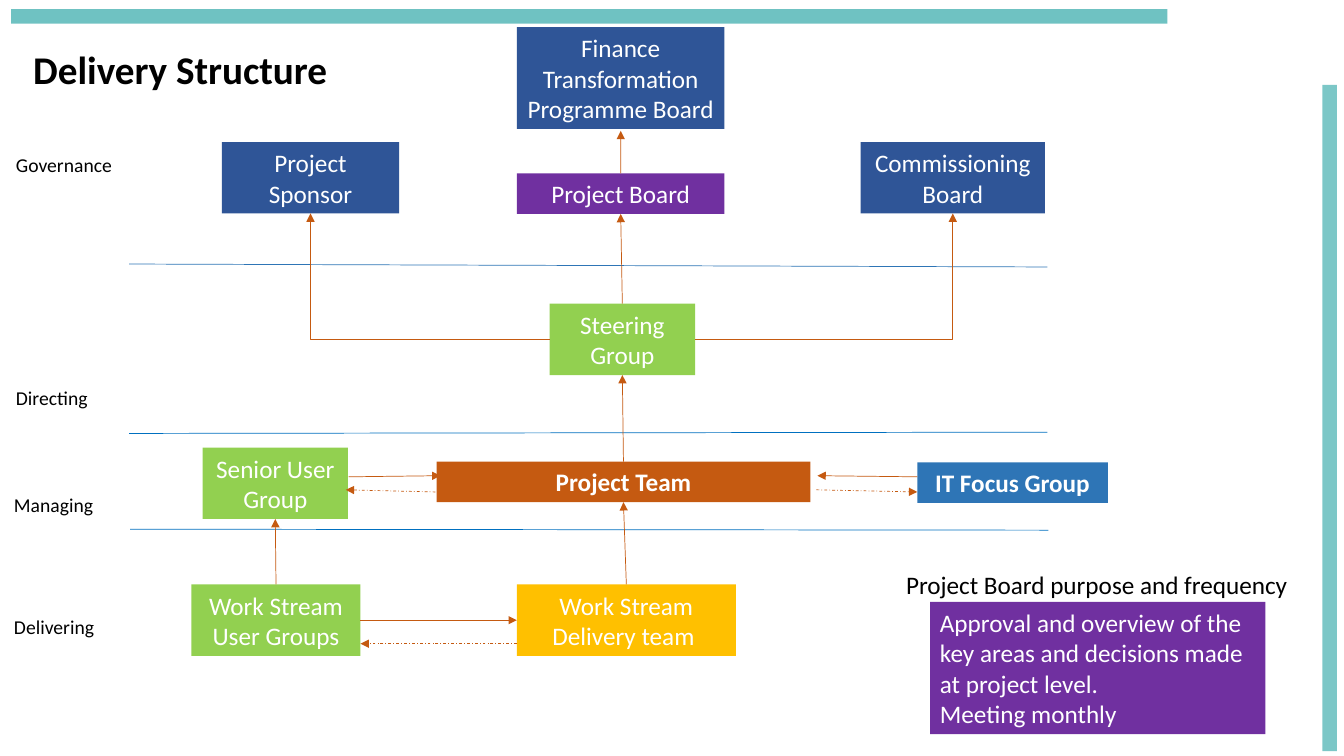
from lxml import etree
from pptx import Presentation
from pptx.dml.color import RGBColor
from pptx.enum.dml import MSO_LINE
from pptx.enum.shapes import MSO_CONNECTOR, MSO_SHAPE
from pptx.enum.text import MSO_AUTO_SIZE, PP_ALIGN
from pptx.oxml.ns import qn
from pptx.util import Pt

RECTANGLE = MSO_SHAPE.RECTANGLE
STRAIGHT, ELBOW = MSO_CONNECTOR.STRAIGHT, MSO_CONNECTOR.ELBOW
LEFT, CENTER = PP_ALIGN.LEFT, PP_ALIGN.CENTER
GROW = MSO_AUTO_SIZE.SHAPE_TO_FIT_TEXT
DASH_DOT = MSO_LINE.DASH_DOT
TOP_SIDE, LEFT_SIDE, BOTTOM_SIDE, RIGHT_SIDE = range(4)
COLORS = {
    "navy": "2F5597", "purple": "7030A0", "orange": "C55A11", "green": "92D050",
    "amber": "FFC000", "blue": "2E75B6", "divider": "0070C0", "teal": "089797",
    "white": "FFFFFF", "black": "000000",
}


def write(shape, text, size, color, bold=False, align=LEFT, wrap=True):
    frame = shape.text_frame
    frame.word_wrap = wrap
    frame.auto_size = GROW
    para = frame.paragraphs[0]
    para.text = text
    para.alignment = align
    para.font.name = "Calibri"
    para.font.size = Pt(size)
    para.font.bold = bold
    para.font.color.rgb = RGBColor.from_string(COLORS[color])


def connect(kind, begin, end, color, arrow=True):
    """Draw a thin line; each end is an (x, y) point or a (box name, side) pair."""
    ends = [(0, 0) if isinstance(spot[0], str) else spot for spot in (begin, end)]
    line = page.shapes.add_connector(kind, *[Pt(value) for spot in ends for value in spot])
    if isinstance(begin[0], str):
        line.begin_connect(boxes[begin[0]], begin[1])
    if isinstance(end[0], str):
        line.end_connect(boxes[end[0]], end[1])
    line.line.color.rgb = RGBColor.from_string(COLORS[color])
    line.line.width = Pt(0.5)
    properties = line._element.spPr
    if arrow:
        etree.SubElement(properties.find(qn("a:ln")), qn("a:tailEnd"), type="triangle")
    if kind == ELBOW:
        properties.find(qn("a:prstGeom")).set("prst", "bentConnector2")
    etree.SubElement(properties, qn("a:effectLst"))
    return line


deck = Presentation()
deck.slide_width, deck.slide_height = Pt(960), Pt(540)
page = deck.slides.add_slide(deck.slide_layouts[6])

# Teal bars: left, top, width, height, opacity in percent
for left, top, width, height, opacity in [
    (944.6, 60.6, 10.4, 476, 53),
    (7.9, 6.5, 826, 10.4, 58),
]:
    bar = page.shapes.add_shape(RECTANGLE, Pt(left), Pt(top), Pt(width), Pt(height))
    bar.shadow.inherit = False
    bar.fill.solid()
    bar.fill.fore_color.rgb = RGBColor.from_string(COLORS["teal"])
    bar.line.fill.background()
    shade = bar._element.spPr.find(qn("a:solidFill"))[0]
    etree.SubElement(shade, qn("a:alpha"), val=str(opacity * 1000))

# Dividers between the levels
for begin, end, color in [
    ((92.2, 188.6), (748.1, 190.7), "blue"),
    ((92.2, 309.6), (748.1, 308.7), "divider"),
    ((92.9, 378), (748.8, 378.7), "divider"),
]:
    connect(STRAIGHT, begin, end, color, arrow=False)

# Boxes: name, text, left, top, width, height, fill, bold, alignment
boxes = {}
for name, text, left, top, width, height, color, bold, align in [
    ("commissioning", "Commissioning Board", 614.8, 101.5, 131.6, 51, "navy", False, CENTER),
    ("programme", "Finance Transformation Programme Board", 369.2, 19.3, 148.3, 72.7, "navy", False, CENTER),
    ("board", "Project Board", 369.2, 123.8, 148.3, 29, "purple", False, CENTER),
    ("team", "Project Team", 311.8, 329.7, 267.1, 29, "orange", True, CENTER),
    ("users", "Work Stream User Groups", 136.8, 417.5, 120.7, 51, "green", False, CENTER),
    ("senior", "Senior User Group", 144.7, 319.7, 103.9, 51, "green", False, CENTER),
    ("steering", "Steering Group", 392.6, 216.9, 103.9, 51, "green", False, CENTER),
    ("sponsor", "Project Sponsor", 158.4, 101.5, 126.8, 51, "navy", False, CENTER),
    ("delivery", "Work Stream Delivery team ", 369.2, 417.5, 156.4, 51, "amber", False, CENTER),
    ("it", "IT Focus Group", 655.2, 330.2, 136.1, 29, "blue", True, CENTER),
    ("purpose", "Approval and overview of the key areas and decisions made at project level.\nMeeting monthly",
     664.3, 429.9, 239.5, 94.5, "purple", False, LEFT),
]:
    box = page.shapes.add_shape(RECTANGLE, Pt(left), Pt(top), Pt(width), Pt(height))
    box.shadow.inherit = False
    box.fill.solid()
    box.fill.fore_color.rgb = RGBColor.from_string(COLORS[color])
    box.line.fill.background()
    write(box, text, 18, "white", bold, align)
    boxes[name] = box

# Solid arrows
for kind, begin, end in [
    (ELBOW, ("steering", LEFT_SIDE), ("sponsor", BOTTOM_SIDE)),
    (ELBOW, ("steering", RIGHT_SIDE), ("commissioning", BOTTOM_SIDE)),
    (STRAIGHT, ("board", TOP_SIDE), (443.4, 93.5)),
    (STRAIGHT, ("steering", TOP_SIDE), ("board", BOTTOM_SIDE)),
    (STRAIGHT, ("team", TOP_SIDE), ("steering", BOTTOM_SIDE)),
    (STRAIGHT, ("delivery", TOP_SIDE), ("team", BOTTOM_SIDE)),
    (STRAIGHT, ("users", TOP_SIDE), ("senior", BOTTOM_SIDE)),
    (STRAIGHT, ("users", RIGHT_SIDE), ("delivery", LEFT_SIDE)),
    (STRAIGHT, (249.1, 340.6), (314.6, 339.8)),
    (STRAIGHT, (655.2, 340.6), (583.9, 339.8)),
]:
    connect(kind, begin, end, "orange")

# Dashed feedback arrows
for begin, end in [
    ((311, 351.4), (247, 349.9)),
    ((369.2, 459.8), (257.5, 459.8)),
    ((583.2, 349.9), (655.2, 351.4)),
]:
    connect(STRAIGHT, begin, end, "orange").line.dash_style = DASH_DOT

# Plain text: text, left, top, width, height, size, bold, wrap
for text, left, top, width, height, size, bold, wrap in [
    ("Governance", 4.3, 105.5, 84.2, 24.2, 14, False, False),
    ("Directing", 4.3, 272.4, 69.8, 24.2, 14, False, False),
    ("Managing", 2.9, 348.7, 72, 24.2, 14, False, False),
    ("Delivering", 2.9, 435.8, 72.7, 24.2, 14, False, False),
    ("Project Board purpose and frequency", 640.1, 402.8, 293, 29, 18, False, True),
    ("Delivery Structure", 16.6, 28.8, 455, 41.2, 28, True, True),
]:
    label = page.shapes.add_textbox(Pt(left), Pt(top), Pt(width), Pt(height))
    write(label, text, size, "black", bold, wrap=wrap)

deck.save("out.pptx")
